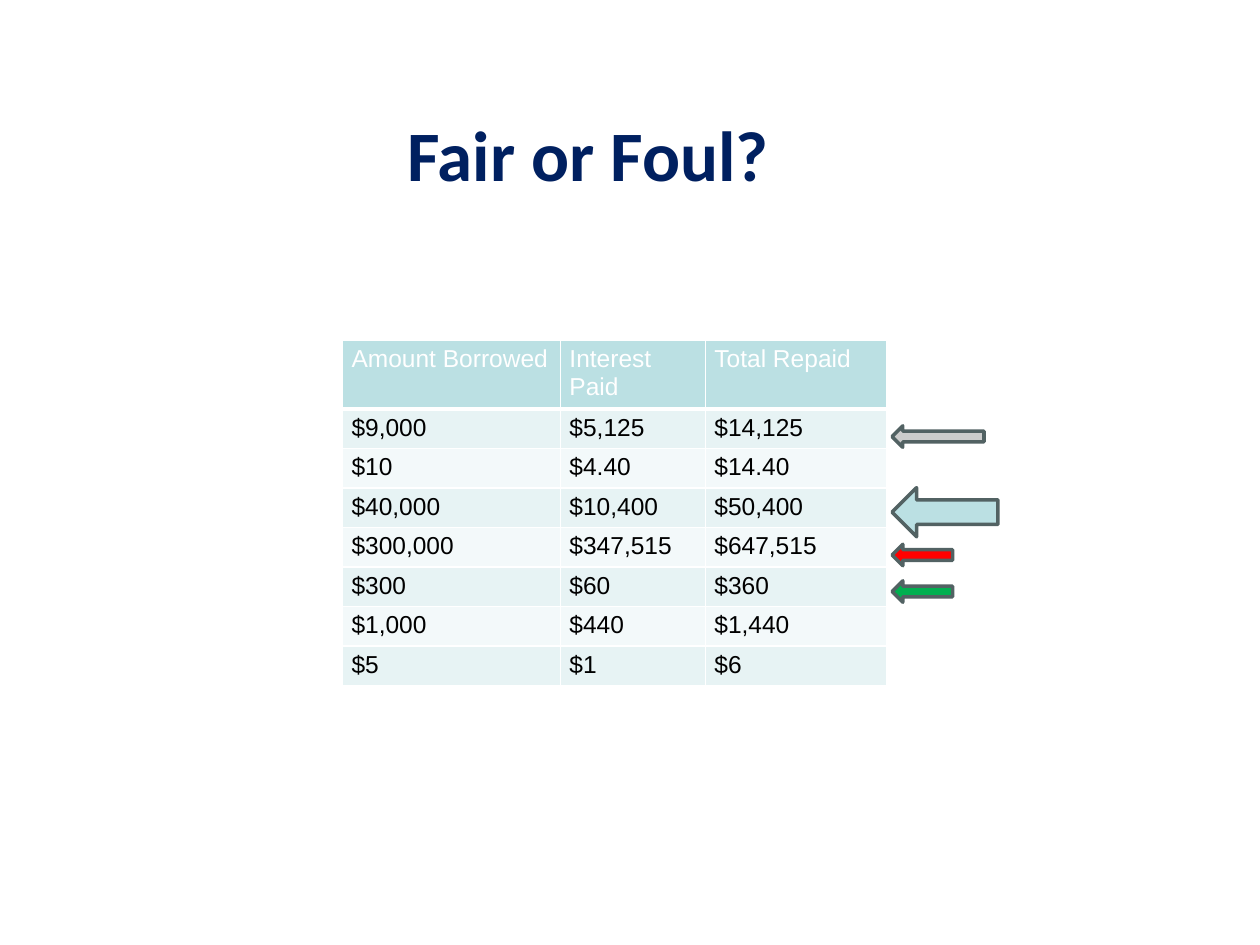
from pptx import Presentation
from pptx.dml.color import RGBColor
from pptx.enum.shapes import MSO_SHAPE
from pptx.enum.text import MSO_ANCHOR, PP_ALIGN
from pptx.oxml.ns import qn
from pptx.util import Inches, Pt
from lxml import etree

LEFT_ARROW = MSO_SHAPE.LEFT_ARROW
MIDDLE, CENTER = MSO_ANCHOR.MIDDLE, PP_ALIGN.CENTER

# Content
TITLE = "Fair or Foul?"
LOANS = [
    ("Amount Borrowed", "Interest Paid", "Total Repaid"),
    ("$9,000", "$5,125", "$14,125"),
    ("$10", "$4.40", "$14.40"),
    ("$40,000", "$10,400", "$50,400"),
    ("$300,000", "$347,515", "$647,515"),
    ("$300", "$60", "$360"),
    ("$1,000", "$440", "$1,440"),
    ("$5", "$1", "$6"),
]
COLUMN_WIDTHS = (1.73, 1.15, 1.44)
HEADER_HEIGHT, ROW_HEIGHT = 0.53, 0.3
HEADER_FILL, BAND_FILLS = "BBE0E3", ("E7F3F4", "F3F9FA")
ARROW_LEFT = 7.08
ARROWS = [  # top, width, height, fill
    (3.87, 0.84, 0.39, "BBE0E3"),
    (4.32, 0.48, 0.17, "FF0000"),
    (3.38, 0.73, 0.17, "CCCCCC"),
    (4.61, 0.48, 0.17, "00B050"),
]


def color(value):
    return RGBColor.from_string(value)


def add_span(para, text, font, size, hue, bold=False):
    span = para.add_run()
    span.text = text
    span.font.name, span.font.size, span.font.bold = font, Pt(size), bold
    span.font.color.rgb = color(hue)


def add_borders(cell, bottom):
    properties = cell._tc.get_or_add_tcPr()
    for side, width in (("L", 1), ("R", 1), ("T", 1), ("B", bottom)):
        line = etree.SubElement(properties, qn(f"a:ln{side}"), w=str(Pt(width)))
        fill = etree.SubElement(line, qn("a:solidFill"))
        etree.SubElement(fill, qn("a:srgbClr"), val="FFFFFF")


deck = Presentation()
deck.slide_width, deck.slide_height = Inches(10), Inches(7.5)
page = deck.slides.add_slide(deck.slide_layouts[6])

# Title
box = page.shapes.add_textbox(Inches(0.42), Inches(0.63), Inches(8.5), Inches(1.17))
box.text_frame.word_wrap = True
box.text_frame.vertical_anchor = MIDDLE
para = box.text_frame.paragraphs[0]
para.alignment = CENTER
add_span(para, TITLE, "Calibri", 40.5, "002060", True)

# Loan table
table_height = HEADER_HEIGHT + ROW_HEIGHT * (len(LOANS) - 1)
table = page.shapes.add_table(
    len(LOANS), len(COLUMN_WIDTHS), Inches(2.72), Inches(2.7),
    Inches(sum(COLUMN_WIDTHS)), Inches(table_height)).table
for column, width in zip(table.columns, COLUMN_WIDTHS):
    column.width = Inches(width)
for r, values in enumerate(LOANS):
    header = r == 0
    table.rows[r].height = Inches(HEADER_HEIGHT if header else ROW_HEIGHT)
    for c, value in enumerate(values):
        cell = table.cell(r, c)
        cell.margin_left = cell.margin_right = Inches(0.07)
        cell.margin_top = cell.margin_bottom = Inches(0.04)
        add_borders(cell, 3 if header else 1)
        cell.fill.solid()
        cell.fill.fore_color.rgb = color(HEADER_FILL if header else BAND_FILLS[(r - 1) % 2])
        add_span(cell.text_frame.paragraphs[0], value, "Arial", 14,
                 "FFFFFF" if header else "000000")

# Arrows pointing at rows
for top, width, height, fill in ARROWS:
    arrow = page.shapes.add_shape(
        LEFT_ARROW, Inches(ARROW_LEFT), Inches(top), Inches(width), Inches(height))
    arrow.shadow.inherit = False
    arrow.fill.solid()
    arrow.fill.fore_color.rgb = color(fill)
    arrow.line.color.rgb = color("526263")
    arrow.line.width = Pt(2)

deck.save("out.pptx")
